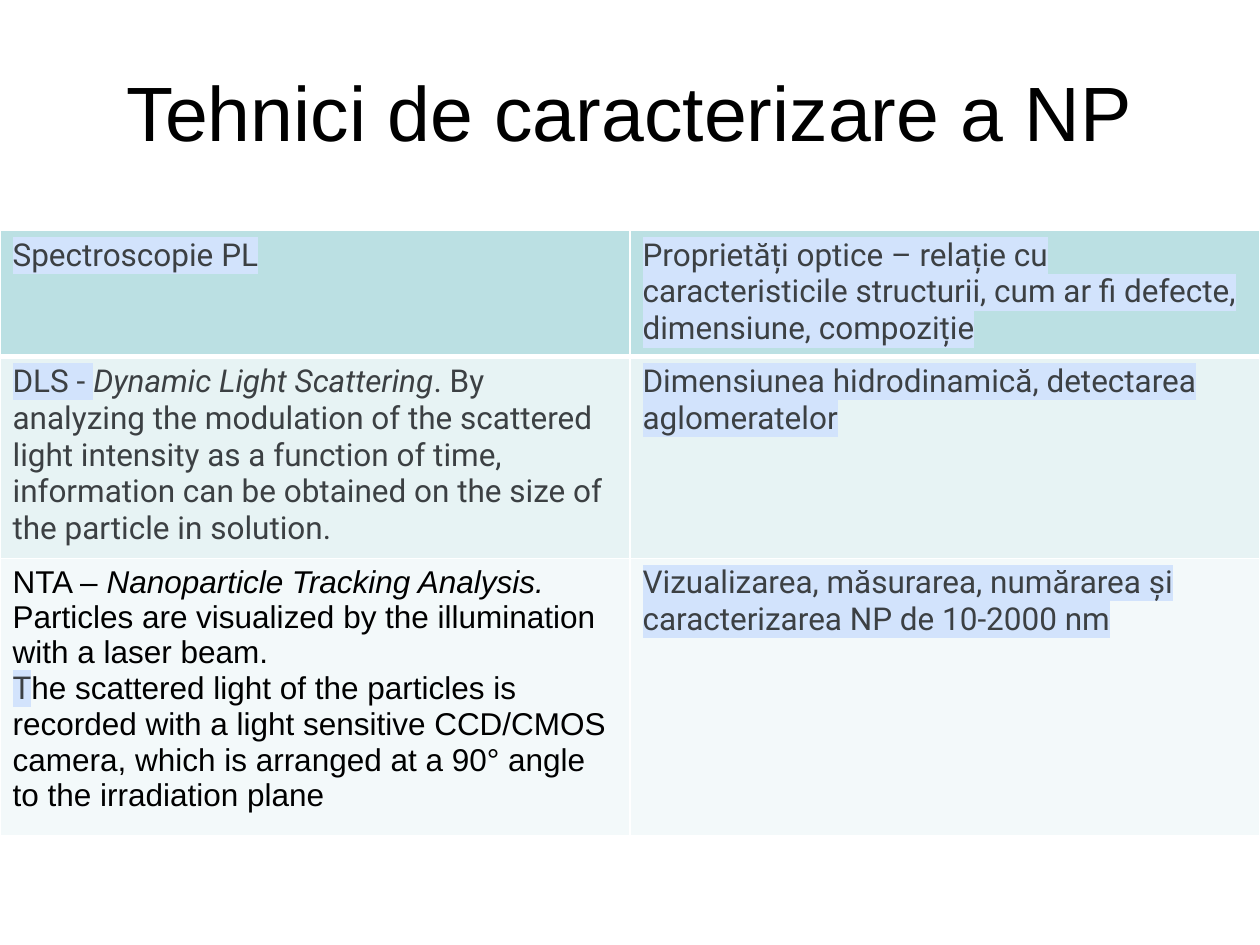
import lxml.etree
import pptx
import pptx.dml.color
import pptx.enum.text
import pptx.oxml.ns
import pptx.util

TITLE = "Tehnici de caracterizare a NP"
ROWS = [
    (
        [[("Spectroscopie PL", "marked")]],
        [[("Proprietăți optice – relație cu caracteristicile structurii, "
           "cum ar fi defecte, dimensiune, compoziție", "marked")]],
    ),
    (
        [[
            ("DLS - ", "marked"),
            ("Dynamic Light Scattering", "grey_italic"),
            (". By analyzing the modulation of the scattered light intensity "
             "as a function of time, information can be obtained on the size "
             "of the particle in solution.", "grey"),
        ]],
        [[("Dimensiunea hidrodinamică, detectarea aglomeratelor", "marked")]],
    ),
    (
        [
            [
                ("NTA – ", "plain"),
                ("Nanoparticle Tracking Analysis. ", "plain_italic"),
                ("Particles are visualized by the illumination with a laser beam.",
                 "plain"),
            ],
            [
                ("T", "marked"),
                ("he scattered light of the particles is recorded with a light "
                 "sensitive CCD/CMOS camera, which is arranged at a 90° angle "
                 "to the irradiation plane", "plain"),
            ],
        ],
        [[("Vizualizarea, măsurarea, numărarea și caracterizarea "
           "NP de 10-2000 nm", "marked")]],
    ),
]

GREY = {"name": "Roboto", "size": 18, "color": "3C4043"}
PLAIN = {"name": "Arial", "size": 18, "color": "000000"}
THEME = {
    "title": {**PLAIN, "size": 44},
    "marked": {**GREY, "highlight": "D2E3FC"},
    "grey": GREY,
    "grey_italic": {**GREY, "italic": True},
    "plain": PLAIN,
    "plain_italic": {**PLAIN, "italic": True},
    "row_fills": ["BBE0E3", "E7F3F4", "F3F9FA"],
    "border": "FFFFFF",
    "border_width": 1,
    "header_rule": 3,
}
WIDTH, HEIGHT = pptx.util.Inches(10), pptx.util.Inches(7.5)
TITLE_AREA = (0.05, 1 / 30, 0.9, 1 / 6)
TABLE_AREA = (0, 0.244, 1, 0.64)
ROW_HEIGHT = pptx.util.Inches(0.41)


def place(area):
    return [round(share * full) for share, full in zip(area, (WIDTH, HEIGHT) * 2)]


def add_color(parent, tag, color):
    holder = lxml.etree.SubElement(parent, pptx.oxml.ns.qn(tag))
    lxml.etree.SubElement(holder, pptx.oxml.ns.qn("a:srgbClr"), val=color)
    return holder


def add_span(para, text, style):
    span = para.add_run()
    span.text = text
    look = dict(THEME[style])
    color = look.pop("color")
    highlight = look.pop("highlight", None)
    look["size"] = pptx.util.Pt(look["size"])
    for key, value in look.items():
        setattr(span.font, key, value)
    span.font.color.rgb = pptx.dml.color.RGBColor.from_string(color)
    if highlight:
        properties = span.font._element
        mark = add_color(properties, "a:highlight", highlight)
        properties.find(pptx.oxml.ns.qn("a:solidFill")).addnext(mark)


def write(frame, paragraphs):
    for index, spans in enumerate(paragraphs):
        para = frame.add_paragraph() if index else frame.paragraphs[0]
        for text, style in spans:
            add_span(para, text, style)


def add_borders(cell, row):
    properties = cell._tc.get_or_add_tcPr()
    thick = {0: "B", 1: "T"}.get(row)
    for side in "LRTB":
        points = THEME["header_rule" if side == thick else "border_width"]
        line = lxml.etree.SubElement(
            properties, pptx.oxml.ns.qn("a:ln" + side), w=str(pptx.util.Pt(points)))
        add_color(line, "a:solidFill", THEME["border"])


def add_title(page):
    box = page.shapes.add_textbox(*place(TITLE_AREA))
    layout = {"word_wrap": True,
              "vertical_anchor": pptx.enum.text.MSO_ANCHOR.MIDDLE}
    for key, value in layout.items():
        setattr(box.text_frame, key, value)
    write(box.text_frame, [[(TITLE, "title")]])
    box.text_frame.paragraphs[0].alignment = pptx.enum.text.PP_ALIGN.CENTER


def add_techniques(page):
    area = place(TABLE_AREA)
    holder = page.shapes.add_table(len(ROWS), len(ROWS[0]), *area)
    table = holder.table
    for row, contents in enumerate(ROWS):
        table.rows[row].height = ROW_HEIGHT
        for column, paragraphs in enumerate(contents):
            cell = table.cell(row, column)
            add_borders(cell, row)
            cell.fill.solid()
            cell.fill.fore_color.rgb = pptx.dml.color.RGBColor.from_string(
                THEME["row_fills"][row])
            write(cell.text_frame, paragraphs)
    holder.height = area[3]


def main():
    deck = pptx.Presentation()
    deck.slide_width, deck.slide_height = WIDTH, HEIGHT
    page = deck.slides.add_slide(deck.slide_layouts[6])
    add_title(page)
    add_techniques(page)
    deck.save("out.pptx")


if __name__ == "__main__":
    main()
